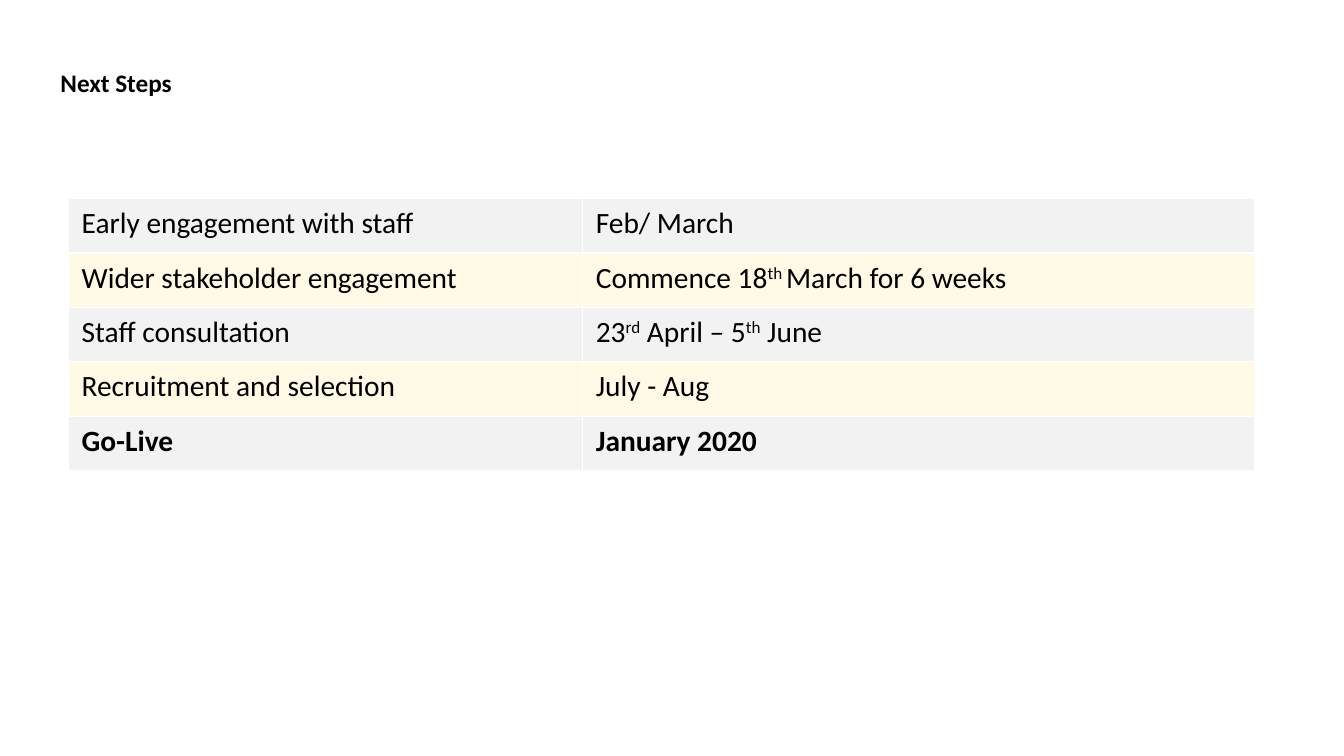
import dataclasses

import pptx
import pptx.dml.color
import pptx.enum.text
import pptx.oxml
import pptx.oxml.ns
import pptx.util
from pptx.util import Inches

FONT = "Calibri"
COLORS = {"text": "000000", "grey": "F2F2F2", "cream": "FFF9E6", "border": "FFFFFF"}
MARGIN_X, MARGIN_Y = Inches(0.13), Inches(0.07)
COLUMN_WIDTHS = (5.1, 6.66)
ROW_HEIGHT = 0.54


@dataclasses.dataclass
class Step:
    """A table row; text between carets is superscript."""
    activity: str
    timing: str
    bold: bool = False


STEPS = [
    Step("Early engagement with staff", "Feb/ March"),
    Step("Wider stakeholder engagement", "Commence 18^th ^March for 6 weeks"),
    Step("Staff consultation", "23^rd^ April – 5^th^ June"),
    Step("Recruitment and selection", "July - Aug"),
    Step("Go-Live", "January 2020", bold=True),
]


def rgb(name: str) -> pptx.dml.color.RGBColor:
    return pptx.dml.color.RGBColor.from_string(COLORS[name])


def set_margins(box) -> None:
    box.margin_left = box.margin_right = MARGIN_X
    box.margin_top = box.margin_bottom = MARGIN_Y


def write_text(p, text: str, size: float, bold: bool) -> None:
    for i, part in enumerate(text.split("^")):
        r = p.add_run()
        r.text = part
        if i % 2:
            r._r.get_or_add_rPr().set("baseline", "30000")
    p.font.name = FONT
    p.font.size = pptx.util.Pt(size)
    p.font.bold = bold
    p.font.color.rgb = rgb("text")


def add_borders(cell) -> None:
    tcPr = cell._tc.get_or_add_tcPr()
    for side in ("lnL", "lnR", "lnT", "lnB"):
        tcPr.append(pptx.oxml.parse_xml(
            f'<a:{side} {pptx.oxml.ns.nsdecls("a")} w="12700"><a:solidFill>'
            f'<a:srgbClr val="{COLORS["border"]}"/></a:solidFill></a:{side}>'))


def add_title(slide, text: str) -> None:
    sp = slide.shapes.title
    sp.left, sp.top, sp.width, sp.height = map(Inches, (0.47, 0.6, 1.38, 0.44))
    tf = sp.text_frame
    set_margins(tf)
    tf.word_wrap = False
    tf.auto_size = pptx.enum.text.MSO_AUTO_SIZE.SHAPE_TO_FIT_TEXT
    tf.vertical_anchor = pptx.enum.text.MSO_ANCHOR.TOP
    p = tf.paragraphs[0]
    p.alignment = pptx.enum.text.PP_ALIGN.LEFT
    write_text(p, text, 18, True)


def add_steps_table(slide, steps: list[Step]) -> None:
    table = slide.shapes.add_table(
        len(steps), len(COLUMN_WIDTHS), Inches(0.68), Inches(1.97),
        Inches(sum(COLUMN_WIDTHS)), Inches(ROW_HEIGHT * len(steps))).table
    table.first_row = table.horz_banding = False
    for column, width in zip(table.columns, COLUMN_WIDTHS):
        column.width = Inches(width)
    for i, step in enumerate(steps):
        table.rows[i].height = Inches(ROW_HEIGHT)
        for j, text in enumerate((step.activity, step.timing)):
            cell = table.cell(i, j)
            set_margins(cell)
            add_borders(cell)
            cell.fill.solid()
            cell.fill.fore_color.rgb = rgb("cream" if i % 2 else "grey")
            write_text(cell.text_frame.paragraphs[0], text, 21, step.bold)


def main() -> None:
    prs = pptx.Presentation()
    prs.slide_width, prs.slide_height = Inches(13.33), Inches(7.5)
    slide = prs.slides.add_slide(prs.slide_layouts[5])

    # Title
    add_title(slide, "Next Steps")

    # Timetable
    add_steps_table(slide, STEPS)

    prs.save("out.pptx")


if __name__ == "__main__":
    main()
